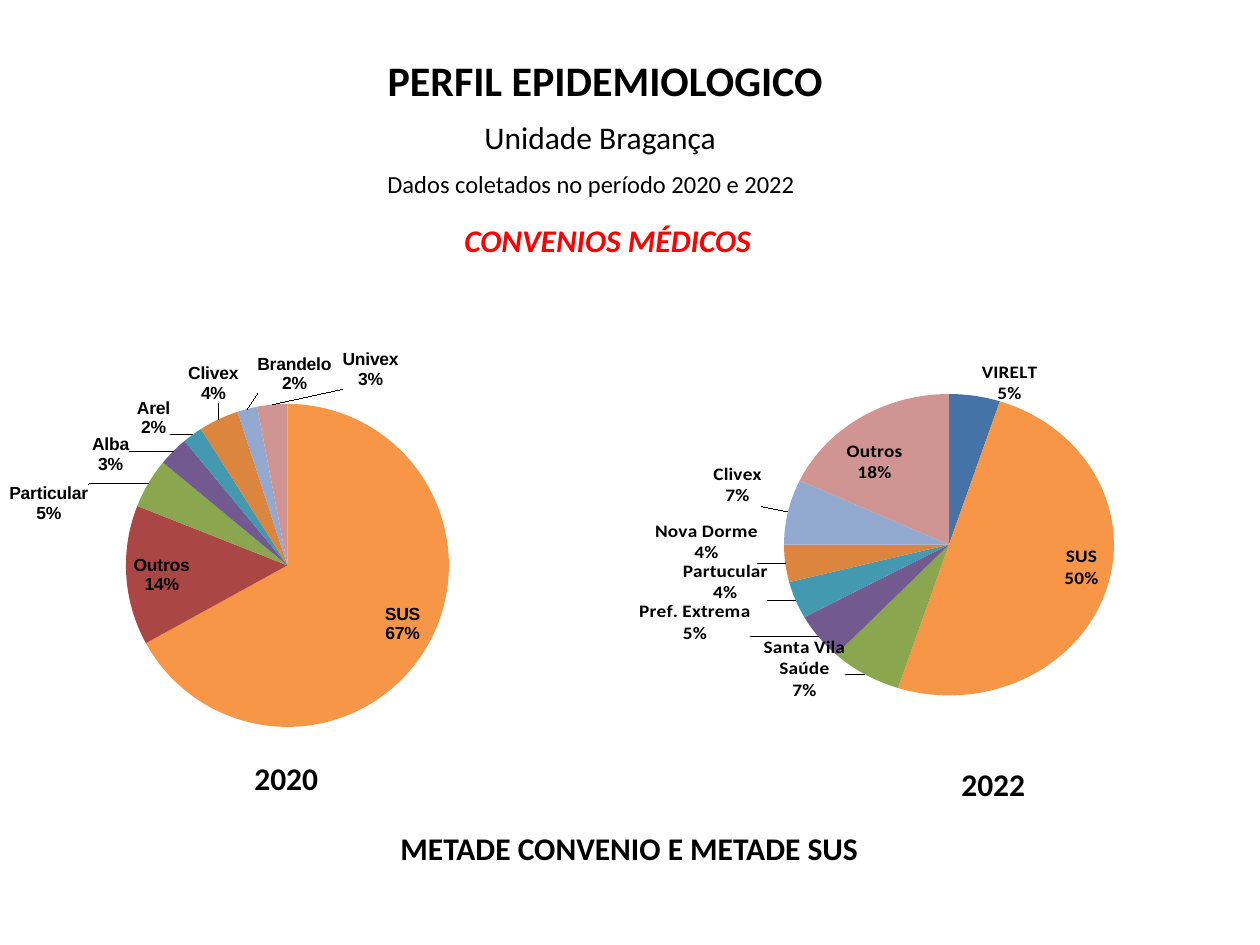
from dataclasses import dataclass

from lxml import etree
from pptx import Presentation
from pptx import util as u
from pptx.chart.data import CategoryChartData
from pptx.dml.color import RGBColor
from pptx.enum import chart as ch
from pptx.enum import text
from pptx.oxml.ns import qn

EMU_PER_PX = 914400 / 126
COLORS = {
    "black": "000000", "red": "FF0000", "blue": "4572A7", "orange": "F79646",
    "brick": "AA4643", "green": "8AA64F", "purple": "725990", "teal": "4299B0",
    "amber": "DC853E", "sky": "93A9CF", "rose": "D09493",
}
INSIDE = ch.XL_LABEL_POSITION.INSIDE_END
OUTSIDE = ch.XL_LABEL_POSITION.OUTSIDE_END


@dataclass(frozen=True)
class Box:
    left: int
    top: int
    width: int
    height: int

    def emu(self) -> list[u.Emu]:
        return [px(v) for v in (self.left, self.top, self.width, self.height)]


@dataclass(frozen=True)
class Line:
    wording: str
    box: Box
    size: int = 18
    color: str = "black"
    bold: bool = True
    italic: bool = False


@dataclass(frozen=True)
class Slice:
    """One insurer's share; dx and dy move its label from the default place."""
    name: str
    percent: int
    color: str
    position: ch.XL_LABEL_POSITION = OUTSIDE
    dx: int = 0
    dy: int = 0


@dataclass(frozen=True)
class Pie:
    frame: Box
    plot: Box
    font: str
    size: int
    slices: tuple[Slice, ...]


TITLE = Line("PERFIL EPIDEMIOLOGICO", Box(375, 48, 465, 63), size=24)
LINES = (
    Line("Unidade Bragança", Box(472, 112, 260, 50), bold=False),
    Line("Dados coletados no período 2020 e 2022", Box(375, 163, 442, 43), size=14, bold=False),
    Line("CONVENIOS MÉDICOS", Box(452, 215, 318, 50), color="red", italic=True),
    Line("2020", Box(242, 753, 89, 50)),
    Line("2022", Box(949, 759, 89, 50)),
    Line("METADE CONVENIO E METADE SUS", Box(388, 823, 488, 50)),
)
PIES = (
    Pie(Box(-15, 316, 694, 442), Box(20, 404, 535, 323), "Arial", 10, (
        Slice("SUS", 67, "orange", INSIDE),
        Slice("Outros", 14, "brick", INSIDE),
        Slice("Particular", 5, "green", dx=-54, dy=44),
        Slice("Alba", 3, "purple", dx=-39, dy=28),
        Slice("Arel", 2, "teal", dx=-18, dy=9),
        Slice("Clivex", 4, "amber", dx=23, dy=-9),
        Slice("Brandelo", 2, "sky", dx=86, dy=-8),
        Slice("Univex", 3, "rose", dx=127, dy=-8),
    )),
    Pie(Box(597, 346, 644, 399), Box(784, 382, 330, 330), "Calibri", 11, (
        Slice("VIRELT", 5, "blue", dx=6, dy=8),
        Slice("SUS", 50, "orange", INSIDE),
        Slice("Santa Vila Saúde", 7, "green", dx=-16, dy=-48),
        Slice("Pref. Extrema", 5, "purple", dx=-62, dy=-44),
        Slice("Partucular", 4, "teal", dx=-21, dy=-46),
        Slice("Nova Dorme", 4, "amber", dx=-20, dy=-48),
        Slice("Clivex", 7, "sky", dx=-19, dy=-4),
        Slice("Outros", 18, "rose", INSIDE, dx=-18, dy=19),
    )),
)


def px(length: int) -> u.Emu:
    return u.Emu(round(length * EMU_PER_PX))


def rgb(name: str) -> RGBColor:
    return RGBColor.from_string(COLORS[name])


def write_line(shape, line: Line) -> None:
    shape.left, shape.top, shape.width, shape.height = line.box.emu()
    frame = shape.text_frame
    frame.word_wrap = False
    frame.auto_size = text.MSO_AUTO_SIZE.SHAPE_TO_FIT_TEXT
    frame.vertical_anchor = text.MSO_ANCHOR.TOP
    paragraph = frame.paragraphs[0]
    paragraph.alignment = text.PP_ALIGN.LEFT
    run = paragraph.add_run()
    run.text = line.wording
    font = run.font
    font.name, font.size = "Calibri", u.Pt(line.size)
    font.bold, font.italic = line.bold, line.italic
    font.color.rgb = rgb(line.color)


def manual_layout(**values: str | float) -> etree._Element:
    layout = etree.Element(qn("c:layout"))
    manual = etree.SubElement(layout, qn("c:manualLayout"))
    for tag, value in values.items():
        etree.SubElement(manual, qn(f"c:{tag}")).set("val", str(value))
    return layout


def place_plot(chart, pie: Pie) -> None:
    area = chart.element.find(".//" + qn("c:plotArea"))
    for old in area.findall(qn("c:layout")):
        area.remove(old)
    frame, plot = pie.frame, pie.plot
    area.insert(0, manual_layout(
        layoutTarget="inner", xMode="edge", yMode="edge",
        x=round((plot.left - frame.left) / frame.width, 4),
        y=round((plot.top - frame.top) / frame.height, 4),
        w=round(plot.width / frame.width, 4),
        h=round(plot.height / frame.height, 4)))


def finish_label(label, part: Slice, frame: Box) -> None:
    """Show category over percentage and move the label by its offset."""
    for tag, shown in (("showVal", "0"), ("showCatName", "1"), ("showPercent", "1")):
        label.find(qn(f"c:{tag}")).set("val", shown)
    etree.SubElement(label, qn("c:separator")).text = "\n"
    number_format = etree.Element(qn("c:numFmt"), formatCode="0%", sourceLinked="0")
    label.find(qn("c:txPr")).addprevious(number_format)
    if part.dx or part.dy:
        label.find(qn("c:idx")).addnext(manual_layout(
            x=round(part.dx / frame.width, 4), y=round(part.dy / frame.height, 4)))


def draw_pie(slide, pie: Pie) -> None:
    data = CategoryChartData()
    data.categories = [part.name for part in pie.slices]
    data.add_series("Series 1", [part.percent for part in pie.slices])
    chart = slide.shapes.add_chart(ch.XL_CHART_TYPE.PIE, *pie.frame.emu(), data).chart
    chart.has_title = chart.has_legend = False
    chart.font.name, chart.font.size = "Calibri", u.Pt(10)
    chart.font.color.rgb = rgb("black")
    place_plot(chart, pie)

    series = chart.plots[0].series[0]
    for index, part in enumerate(pie.slices):
        point = series.points[index]
        point.format.fill.solid()
        point.format.fill.fore_color.rgb = rgb(part.color)
        point.format.line.fill.background()
        font = point.data_label.font
        font.name, font.size, font.bold = pie.font, u.Pt(pie.size), True
        font.color.rgb = rgb("black")
        point.data_label.position = part.position
    for label, part in zip(chart.element.iter(qn("c:dLbl")), pie.slices):
        finish_label(label, part, pie.frame)


def main() -> None:
    deck = Presentation()
    deck.slide_width, deck.slide_height = px(1260), px(945)
    slide = deck.slides.add_slide(deck.slide_layouts[5])
    write_line(slide.shapes.title, TITLE)
    for pie in PIES:
        draw_pie(slide, pie)
    for line in LINES:
        write_line(slide.shapes.add_textbox(*line.box.emu()), line)
    deck.save("out.pptx")


if __name__ == "__main__":
    main()
